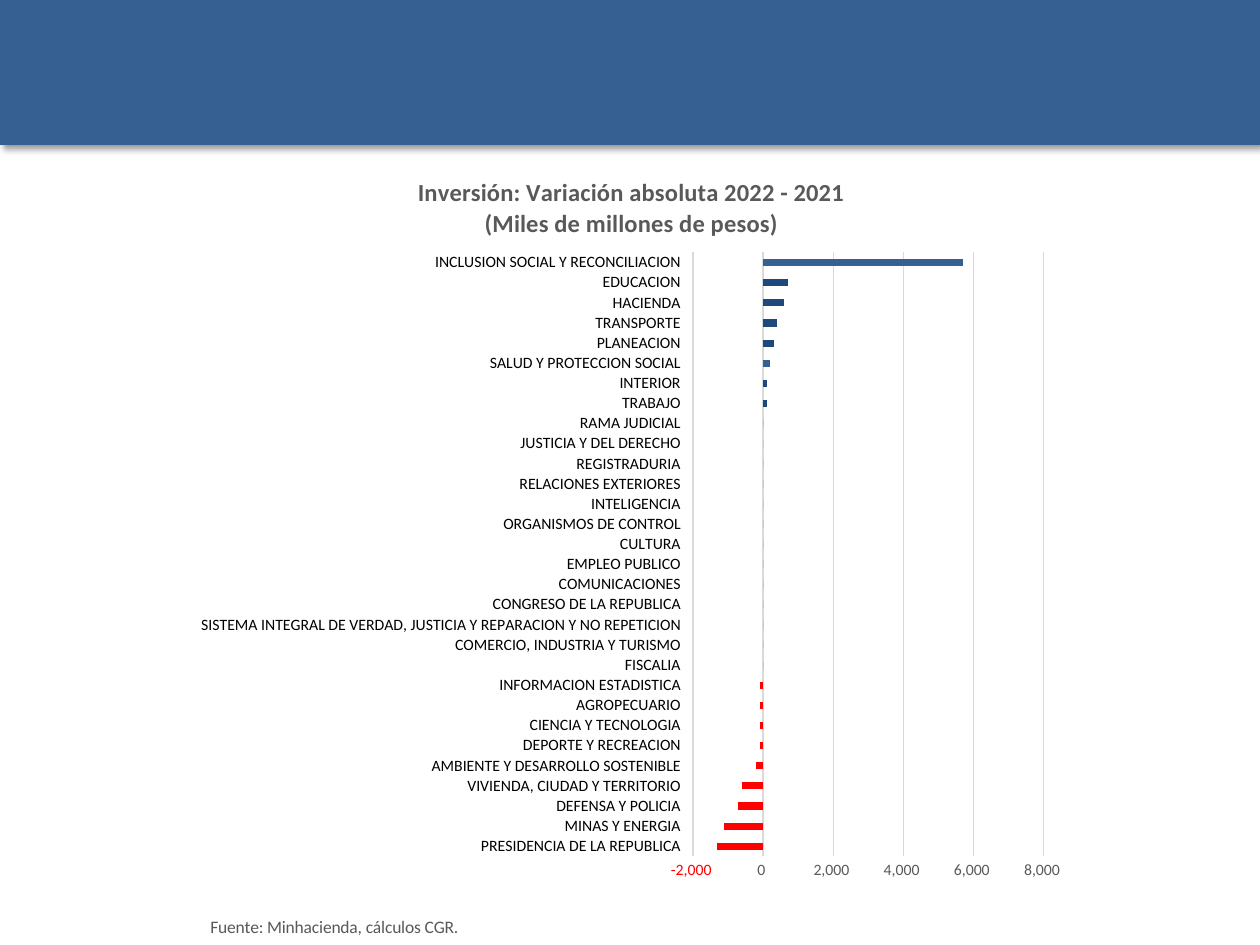
import lxml.etree
import pptx
import pptx.chart.data
import pptx.dml.color
import pptx.enum.chart
import pptx.enum.shapes
import pptx.oxml
import pptx.oxml.ns
import pptx.util

Inches = pptx.util.Inches
Pt = pptx.util.Pt
qn = pptx.oxml.ns.qn

COLOURS = {
    "header": "376092", "negative": "FF0000", "dark": "1F497D", "light": "4F81BD",
    "grey": "595959", "grid": "D9D9D9", "text": "000000",
}
SECTORS = [
    ("PRESIDENCIA DE LA REPUBLICA", -1300),
    ("MINAS Y ENERGIA", -1100),
    ("DEFENSA Y POLICIA", -700),
    ("VIVIENDA, CIUDAD Y TERRITORIO", -600),
    ("AMBIENTE Y DESARROLLO SOSTENIBLE", -200),
    ("DEPORTE Y RECREACION", -100),
    ("CIENCIA Y TECNOLOGIA", -100),
    ("AGROPECUARIO", -100),
    ("INFORMACION ESTADISTICA", -100),
    ("FISCALIA", 0),
    ("COMERCIO, INDUSTRIA Y TURISMO", 0),
    ("SISTEMA INTEGRAL DE VERDAD, JUSTICIA Y REPARACION Y NO REPETICION", 0),
    ("CONGRESO DE LA REPUBLICA", 0),
    ("COMUNICACIONES", 0),
    ("EMPLEO PUBLICO", 0),
    ("CULTURA", 0),
    ("ORGANISMOS DE CONTROL", 0),
    ("INTELIGENCIA", 0),
    ("RELACIONES EXTERIORES", 0),
    ("REGISTRADURIA", 0),
    ("JUSTICIA Y DEL DERECHO", 0),
    ("RAMA JUDICIAL", 0),
    ("TRABAJO", 100),
    ("INTERIOR", 100),
    ("SALUD Y PROTECCION SOCIAL", 200),
    ("PLANEACION", 300),
    ("TRANSPORTE", 400),
    ("HACIENDA", 600),
    ("EDUCACION", 700),
    ("INCLUSION SOCIAL Y RECONCILIACION", 5700),
]
FIRST_RISE = 20
RISE_COLOURS = ["light"] + ["dark"] * 3 + ["header"] + ["dark"] * 4 + ["header"]


def rgb(name):
    """Return the named colour."""
    return pptx.dml.color.RGBColor.from_string(COLOURS[name])


def set_values(target, values):
    """Set each attribute of the target from a dict."""
    for name, value in values.items():
        setattr(target, name, value)


def set_font(font, size, colour, bold=False):
    """Format a font."""
    set_values(font, {"name": "Calibri", "size": Pt(size), "bold": bold})
    font.color.rgb = rgb(colour)


def set_line(line, colour):
    """Give a line its thin stroke."""
    line.color.rgb = rgb(colour)
    line.width = Pt(0.75)


def set_layout(parent, index, **places):
    """Place a chart part by fractions of the chart."""
    layout = parent.find(qn("c:layout"))
    if layout is None:
        layout = pptx.oxml.parse_xml(f"<c:layout {pptx.oxml.ns.nsdecls('c')}/>")
        parent.insert(index, layout)
    manual = lxml.etree.SubElement(layout, qn("c:manualLayout"))
    values = {"xMode": "edge", "yMode": "edge", **places}
    if "w" in places:
        values = {"layoutTarget": "inner", **values}
    for name, value in values.items():
        lxml.etree.SubElement(manual, qn(f"c:{name}")).set("val", str(value))


def add_header(slide):
    """Add the shaded band across the top."""
    header = slide.shapes.add_shape(
        pptx.enum.shapes.MSO_SHAPE.RECTANGLE, 0, 0, Inches(10), Inches(1.15))
    header.fill.solid()
    header.fill.fore_color.rgb = rgb("header")
    header.line.fill.background()
    header.shadow.inherit = False
    effects = header._element.spPr.find(qn("a:effectLst"))
    effects.append(pptx.oxml.parse_xml(
        f'<a:outerShdw {pptx.oxml.ns.nsdecls("a")} blurRad="{Pt(4)}" dist="{Pt(3)}" '
        f'dir="2700000" algn="tl" rotWithShape="0"><a:srgbClr val="{COLOURS["text"]}">'
        '<a:alpha val="40000"/></a:srgbClr></a:outerShdw>'))


def write_title(title, lines, size, bold, x, y):
    """Write and place a chart or axis title."""
    frame = title.text_frame
    frame.text = "\n".join(lines)
    for paragraph in frame.paragraphs:
        set_font(paragraph.runs[0].font, size, "grey", bold)
    set_layout(title._element, 1, x=x, y=y)


def format_axes(chart):
    """Format the sector axis and the value axis."""
    none = pptx.enum.chart.XL_TICK_MARK.NONE
    ticks = {"major_tick_mark": none, "minor_tick_mark": none}
    category_axis, value_axis = chart.category_axis, chart.value_axis
    set_values(category_axis, {**ticks, "has_major_gridlines": False})
    category_axis.tick_label_position = pptx.enum.chart.XL_TICK_LABEL_POSITION.LOW
    set_line(category_axis.format.line, "grid")
    set_font(category_axis.tick_labels.font, 9, "text")
    set_values(value_axis, {
        **ticks, "minimum_scale": -2000, "maximum_scale": 8000,
        "major_unit": 2000, "has_major_gridlines": True})
    value_axis.format.line.fill.background()
    set_line(value_axis.major_gridlines.format.line, "grid")
    set_font(value_axis.tick_labels.font, 9, "grey")
    set_values(value_axis.tick_labels, {
        "number_format": "#,##0_ ;[Red]\\-#,##0\\ ", "number_format_is_linked": False})
    write_title(value_axis.axis_title, ["Fuente: Minhacienda, cálculos CGR."],
                10, False, 0.03, 0.96)


def format_bars(plot):
    """Colour the falls red and the rises blue."""
    set_values(plot, {"gap_width": 182, "vary_by_categories": False})
    series = plot.series[0]
    series.invert_if_negative = False
    series.format.fill.solid()
    series.format.fill.fore_color.rgb = rgb("negative")
    for index, colour in enumerate(RISE_COLOURS, FIRST_RISE):
        fill = series.points[index].format.fill
        fill.solid()
        fill.fore_color.rgb = rgb(colour)


def add_variation_chart(slide):
    """Add the bar chart of investment change by sector."""
    data = pptx.chart.data.CategoryChartData()
    data.categories = [name for name, _ in SECTORS]
    data.add_series("Series 1", [value for _, value in SECTORS])
    chart = slide.shapes.add_chart(
        pptx.enum.chart.XL_CHART_TYPE.BAR_CLUSTERED, Inches(1.43), Inches(1.11),
        Inches(7.14), Inches(6.39), data).chart
    chart.has_legend = False
    set_font(chart.font, 10, "text")
    write_title(chart.chart_title,
                ["Inversión: Variación absoluta 2022 - 2021", "(Miles de millones de pesos)"],
                14, True, 0.26, 0.04)
    format_axes(chart)
    format_bars(chart.plots[0])
    plot_area = chart._chartSpace.find(".//" + qn("c:plotArea"))
    set_layout(plot_area, 0, x=0.57, y=0.14, w=0.39, h=0.75)


def main():
    """Build and save the slide."""
    presentation = pptx.Presentation()
    set_values(presentation, {"slide_width": Inches(10), "slide_height": Inches(7.5)})
    slide = presentation.slides.add_slide(presentation.slide_layouts[6])
    add_header(slide)
    add_variation_chart(slide)
    presentation.save("out.pptx")


if __name__ == "__main__":
    main()
